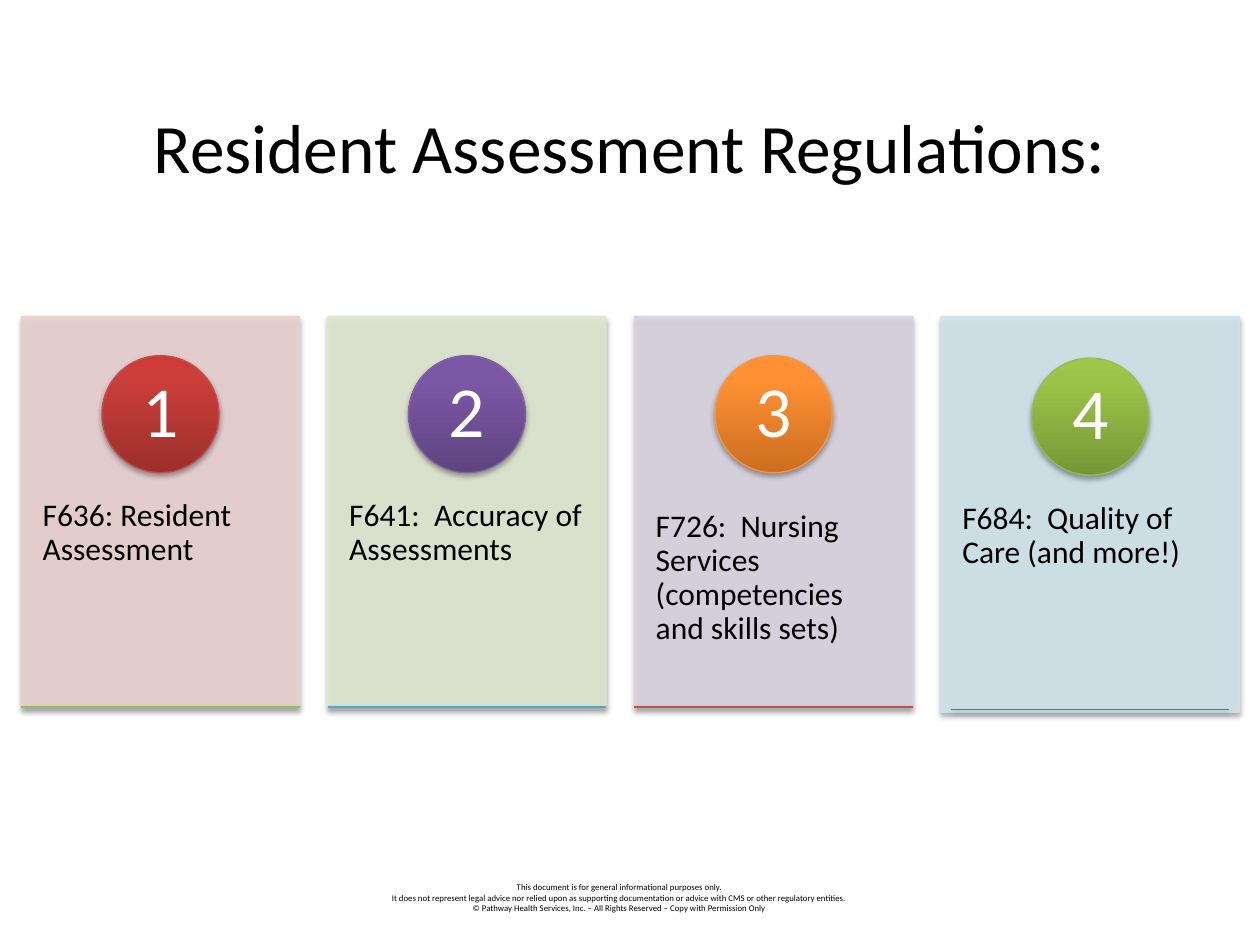
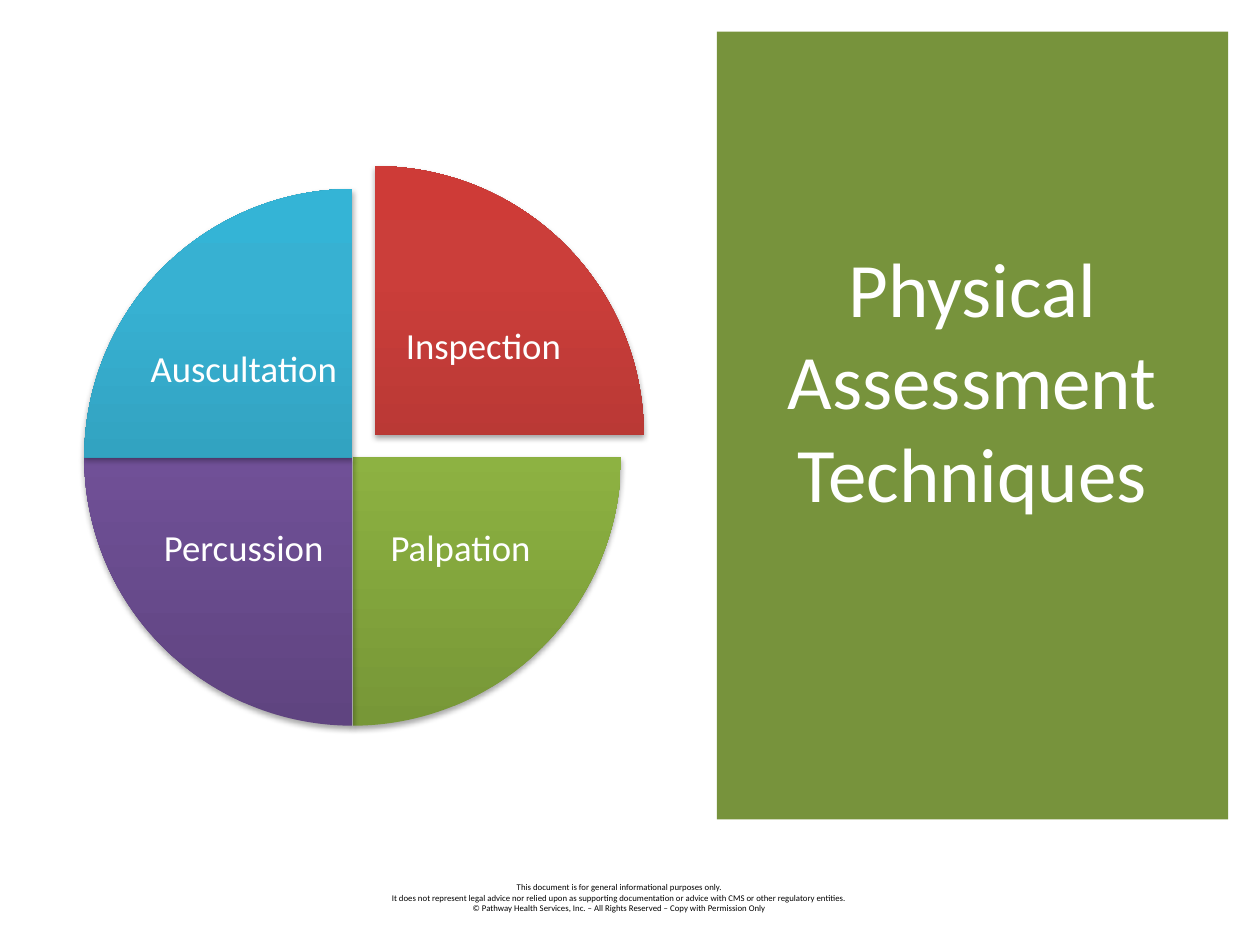
from lxml.etree import SubElement
from pptx import Presentation
from pptx.dml.color import RGBColor
from pptx.enum.shapes import MSO_CONNECTOR as CONNECTOR, MSO_SHAPE as SHAPE
from pptx.enum.text import MSO_ANCHOR as ANCHOR, PP_ALIGN as ALIGN
from pptx.oxml.ns import qn
from pptx.util import Cm, Pt

FONT = "Calibri"
COLORS = {
    "black": "000000", "white": "FFFFFF", "panel": "77933C",
    "rose": "E8D0D0", "sage": "DEE7D1", "lilac": "D8D3E0", "sky": "D0E3EA",
    "red": "C0504D", "purple": "8064A2", "orange": "F79646",
    "green": "9BBB59", "blue": "4BACC6",
}
GRADIENTS = {
    "red": ("9C2F2D", "CB3E3A", "CE3B37"),
    "purple": ("5F4480", "7B58A6", "7C57A8"),
    "orange": ("CC6E20", "FF9034", "FF9136"),
    "green": ("779737", "9BC348", "9DC746"),
    "blue": ("2A88A2", "37B1D2", "34B4D6"),
}
GRADIENT_STOPS = (0, 80, 100)

FOOTER = [
    "This document is for general informational purposes only.",
    "It does not represent legal advice nor relied upon as supporting documentation "
    "or advice with CMS or other regulatory entities.",
    "© Pathway Health Services, Inc. – All Rights Reserved – Copy with Permission Only",
]
REGULATIONS_TITLE = "Resident Assessment Regulations:"
REGULATIONS = [
    ("F636: Resident Assessment", "rose", "red", "green"),
    ("F641:  Accuracy of Assessments", "sage", "purple", "blue"),
    ("F726:  Nursing Services (competencies and skills sets)", "lilac", "orange", "red"),
    ("F684:  Quality of Care (and more!)", "sky", "green", "purple"),
]
TECHNIQUES_TITLE = "Physical Assessment Techniques"
TECHNIQUES = [
    ("Inspection", "red"),
    ("Palpation", "green"),
    ("Percussion", "purple"),
    ("Auscultation", "blue"),
]

CARD_LEFT, CARD_TOP, CARD_PITCH = 0.43, 6.38, 6.18
CARD_WIDTH, CARD_HEIGHT = 5.61, 7.87
LAST_WIDTH, LAST_HEIGHT, LAST_DROP = 6.02, 7.98, 0.05
CIRCLE, CIRCLE_OFFSET, NUMBER_INSET = 2.36, 0.79, 0.34
TEXT_OFFSET, TEXT_HEIGHT = 3.0, 4.72

PIE_LEFT, PIE_TOP, PIE_SIZE, PULL_OUT = 1.7, 3.81, 10.82, 0.46
LABEL_LEFTS, LABEL_TOPS, LABEL_SIZE = (2.92, 7.29), (5.79, 9.4), (3.99, 3.23)
QUARTER = 54


def rgb(name):
    return RGBColor.from_string(COLORS[name])


def write(shape, lines, size, color="black", align=ALIGN.CENTER, anchor=ANCHOR.MIDDLE,
          spacing=None, margins=(0.25, 0.13, 0.25, 0.13)):
    frame = shape.text_frame
    frame.word_wrap = True
    frame.vertical_anchor = anchor
    frame.margin_left, frame.margin_top, frame.margin_right, frame.margin_bottom = map(Cm, margins)
    frame.text = "\n".join(lines)
    for paragraph in frame.paragraphs:
        paragraph.alignment = align
        paragraph.line_spacing = spacing
        paragraph.font.name = FONT
        paragraph.font.size = Pt(size)
        paragraph.font.color.rgb = rgb(color)


def add_text(slide, box, lines, size, **style):
    write(slide.shapes.add_textbox(*map(Cm, box)), lines, size, **style)


def add_shape(slide, kind, box):
    shape = slide.shapes.add_shape(kind, *map(Cm, box))
    shape.line.fill.background()
    return shape


def add_shadow(shape):
    effects = SubElement(shape._element.spPr, qn("a:effectLst"))
    shadow = SubElement(effects, qn("a:outerShdw"), blurRad="40000", dist="23000",
                        dir="5400000", rotWithShape="0")
    color = SubElement(shadow, qn("a:srgbClr"), val=COLORS["black"])
    SubElement(color, qn("a:alpha"), val="35000")


def fill_gradient(shape, name):
    shape.fill.gradient()
    shape.fill.gradient_angle = 90
    stops = shape._element.spPr.find(".//" + qn("a:gsLst"))
    for stop in list(stops):
        stops.remove(stop)
    for position, value in zip(GRADIENT_STOPS, GRADIENTS[name]):
        stop = SubElement(stops, qn("a:gs"), pos=str(position * 1000))
        SubElement(stop, qn("a:srgbClr"), val=value)


def set_outline(shape, name):
    shape.line.color.rgb = rgb(name)
    shape.line.width = Pt(0.75)


def add_slide(presentation):
    slide = presentation.slides.add_slide(presentation.slide_layouts[6])
    add_text(slide, (6.99, 17.65, 11, 0.89), FOOTER, 5, anchor=ANCHOR.TOP)
    return slide


def add_card(slide, index, text, tint, accent, bar_color):
    last = index == len(REGULATIONS) - 1
    width, height = (LAST_WIDTH, LAST_HEIGHT) if last else (CARD_WIDTH, CARD_HEIGHT)
    left = CARD_LEFT + index * CARD_PITCH
    center = left + width / 2
    top = CARD_TOP + (LAST_DROP if last else 0)

    card = add_shape(slide, SHAPE.RECTANGLE, (left, CARD_TOP, width, height))
    card.fill.solid()
    card.fill.fore_color.rgb = rgb(tint)
    set_outline(card, tint)
    for color in card._element.spPr.iter(qn("a:srgbClr")):
        SubElement(color, qn("a:alpha"), val="90000")
    add_shadow(card)
    add_text(slide, (left, top + TEXT_OFFSET, width, TEXT_HEIGHT), [text], 18,
             align=ALIGN.LEFT, anchor=ANCHOR.TOP, spacing=0.9,
             margins=(0.43, 0.91, 0.43, 0.91))

    circle_left, circle_top = center - CIRCLE / 2, top + CIRCLE_OFFSET
    circle = add_shape(slide, SHAPE.OVAL, (circle_left, circle_top, CIRCLE, CIRCLE))
    fill_gradient(circle, accent)
    set_outline(circle, accent)
    add_shadow(circle)
    number_size = CIRCLE - 2 * NUMBER_INSET
    add_text(slide, (circle_left + NUMBER_INSET, circle_top + NUMBER_INSET,
                     number_size, number_size),
             [str(index + 1)], 41, color="white", spacing=0.9,
             margins=(0.18, 0.03, 0.18, 0.03))

    bar_top = Cm(top + CARD_HEIGHT)
    bar = slide.shapes.add_connector(CONNECTOR.STRAIGHT, Cm(center - CARD_WIDTH / 2), bar_top,
                                     Cm(center + CARD_WIDTH / 2), bar_top)
    set_outline(bar, bar_color)
    add_shadow(bar)


def add_wedge(slide, index, label, color):
    shift = PULL_OUT if index == 0 else 0
    wedge = add_shape(slide, SHAPE.PIE,
                      (PIE_LEFT + shift, PIE_TOP - shift, PIE_SIZE, PIE_SIZE))
    wedge.adjustments[0] = (index - 1) % 4 * QUARTER
    wedge.adjustments[1] = index * QUARTER
    fill_gradient(wedge, color)
    add_shadow(wedge)
    label_left = LABEL_LEFTS[index < 2] + shift
    label_top = LABEL_TOPS[index in (1, 2)] - shift
    add_text(slide, (label_left, label_top, *LABEL_SIZE), [label], 21, color="white",
             margins=(0.08,) * 4)


def build_regulations(presentation):
    slide = add_slide(presentation)
    add_text(slide, (1.75, 2.41, 21.9, 2.77), [REGULATIONS_TITLE], 39.6,
             margins=(0.25, 0.13, 0.25, 1.83))
    for index, regulation in enumerate(REGULATIONS):
        add_card(slide, index, *regulation)


def build_techniques(presentation):
    slide = add_slide(presentation)
    panel = add_shape(slide, SHAPE.RECTANGLE, (14.45, 0.64, 10.31, 15.88))
    panel.fill.solid()
    panel.fill.fore_color.rgb = rgb("panel")
    panel.shadow.inherit = False
    write(panel, [TECHNIQUES_TITLE], 44, color="white", margins=(0.25, 0.13, 0.25, 2.0))
    for index, technique in enumerate(TECHNIQUES):
        add_wedge(slide, index, *technique)


def main():
    presentation = Presentation()
    presentation.slide_width, presentation.slide_height = Cm(25.4), Cm(19.05)
    build_regulations(presentation)
    build_techniques(presentation)
    presentation.save("out.pptx")


if __name__ == "__main__":
    main()
